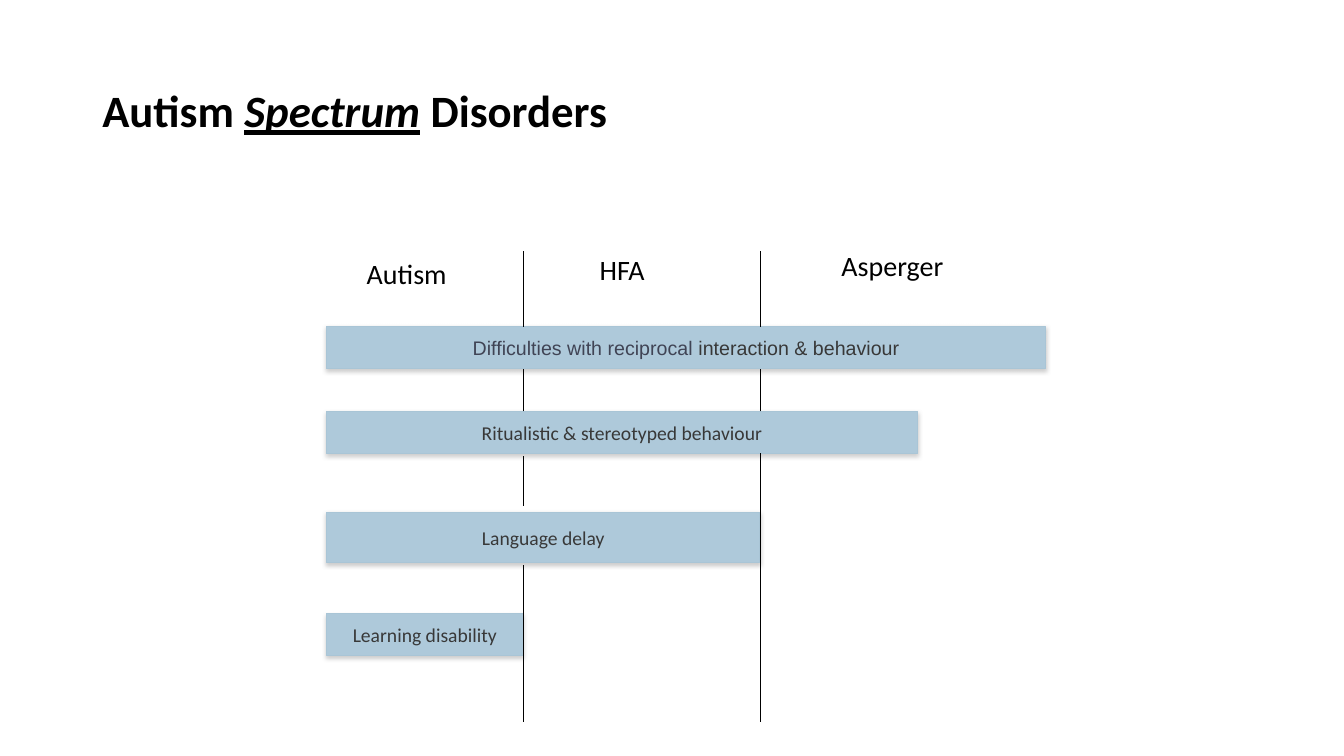
from lxml import etree
from pptx import Presentation
from pptx.dml.color import RGBColor
from pptx.enum import shapes, text
from pptx.oxml import ns
from pptx.util import Pt

theme = {
    "black": RGBColor.from_string("000000"),
    "bar": RGBColor.from_string("AEC9DA"),
    "edge": RGBColor.from_string("A9C5D6"),
    "ink": RGBColor.from_string("383838"),
    "slate": RGBColor.from_string("404455"),
    "shade": "808080",
    "face": "Calibri",
    "alt": "Arial",
    "title": Pt(32),
    "head": Pt(20),
    "body": Pt(14),
}


def style(font, face, size, color):
    font.name, font.size = face, size
    font.color.rgb = color


def cast(shape):
    shape.shadow.inherit = False
    effects = shape._element.spPr.find(ns.qn("a:effectLst"))
    outer = etree.SubElement(effects, ns.qn("a:outerShdw"), blurRad=str(Pt(3.1)),
                             dist=str(Pt(1.6)), dir="5400000", rotWithShape="0")
    color = etree.SubElement(outer, ns.qn("a:srgbClr"), val=theme["shade"])
    etree.SubElement(color, ns.qn("a:alpha"), val="38000")


deck = Presentation()
deck.slide_width, deck.slide_height = Pt(960), Pt(540)
slide = deck.slides.add_slide(deck.slide_layouts[6])

title = slide.shapes.add_textbox(Pt(66), Pt(28.75), Pt(828), Pt(104.4))
frame = title.text_frame
frame.word_wrap = True
frame.vertical_anchor = text.MSO_ANCHOR.MIDDLE
para = frame.paragraphs[0]
para.line_spacing = 0.9
style(para.font, theme["face"], theme["title"], theme["black"])
para.font.bold = True
for words, accent in (("Autism ", False), ("Spectrum", True), (" Disorders", False)):
    run = para.add_run()
    run.text = words
    run.font.italic = run.font.underline = accent

left, first, second = 233.4, 373.7, 542.9
bars = [
    (233.3, 746.8, 30.2, theme["alt"], [("Difficulties with reciprocal ", theme["slate"]),
                                        ("interaction & behaviour", theme["ink"])]),
    (293.8, 655.3, 30.2, theme["face"], [("Ritualistic & stereotyped behaviour", theme["ink"])]),
    (365.8, second, 36, theme["face"], [("Language delay", theme["ink"])]),
    (438.5, first, 29.8, theme["face"], [("Learning disability", theme["ink"])]),
]
for top, right, height, face, parts in bars:
    bar = slide.shapes.add_shape(shapes.MSO_SHAPE.RECTANGLE, Pt(left), Pt(top),
                                 Pt(right - left), Pt(height))
    bar.fill.solid()
    bar.fill.fore_color.rgb = theme["bar"]
    bar.line.color.rgb = theme["edge"]
    bar.line.width = Pt(0.75)
    cast(bar)
    frame = bar.text_frame
    frame.word_wrap = False
    frame.vertical_anchor = text.MSO_ANCHOR.MIDDLE
    para = frame.paragraphs[0]
    para.alignment = text.PP_ALIGN.CENTER
    for words, color in parts:
        run = para.add_run()
        run.text = words
        style(run.font, face, theme["body"], color)

rules = {
    first: [(179.3, 233.3), (263.5, 293.8), (325.4, 361.4), (403.9, 515.5)],
    second: [(179.3, 233.3), (263.5, 293.8), (323.3, 515.5)],
}
for x, spans in rules.items():
    for top, bottom in spans:
        rule = slide.shapes.add_connector(shapes.MSO_CONNECTOR.STRAIGHT,
                                          Pt(x), Pt(bottom), Pt(x), Pt(top))
        rule.line.color.rgb = theme["black"]
        rule.line.width = Pt(0.75)
        etree.SubElement(rule._element.spPr, ns.qn("a:effectLst"))

heads = [("Autism", 254.9, 180, 72), ("HFA", 421.2, 177.1, 47.5), ("Asperger", 594, 174.2, 88.6)]
for words, x, top, width in heads:
    head = slide.shapes.add_textbox(Pt(x), Pt(top), Pt(width), Pt(31.7))
    frame = head.text_frame
    frame.word_wrap = False
    frame.auto_size = text.MSO_AUTO_SIZE.SHAPE_TO_FIT_TEXT
    para = frame.paragraphs[0]
    para.text = words
    style(para.font, theme["face"], theme["head"], theme["black"])

deck.save("out.pptx")
